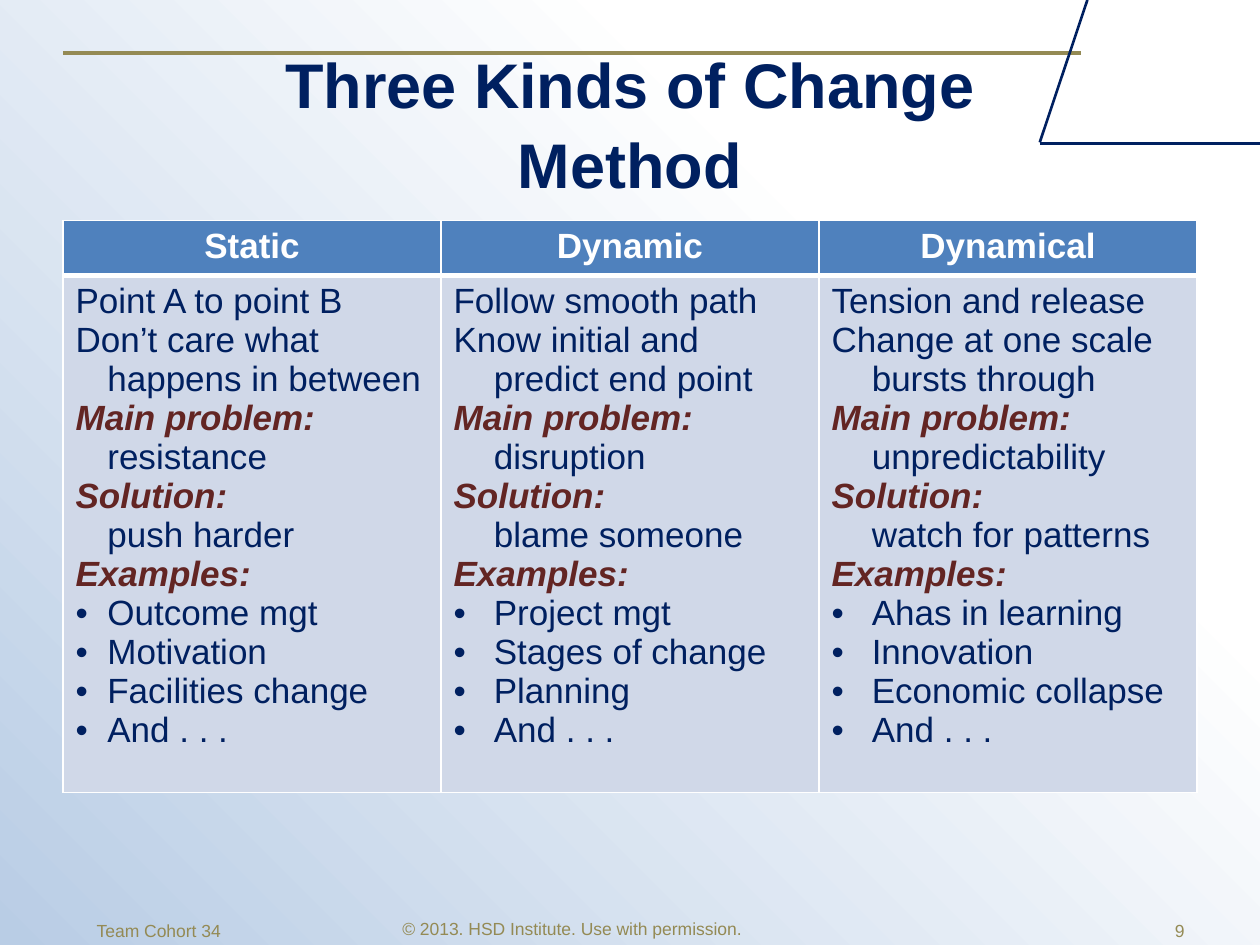
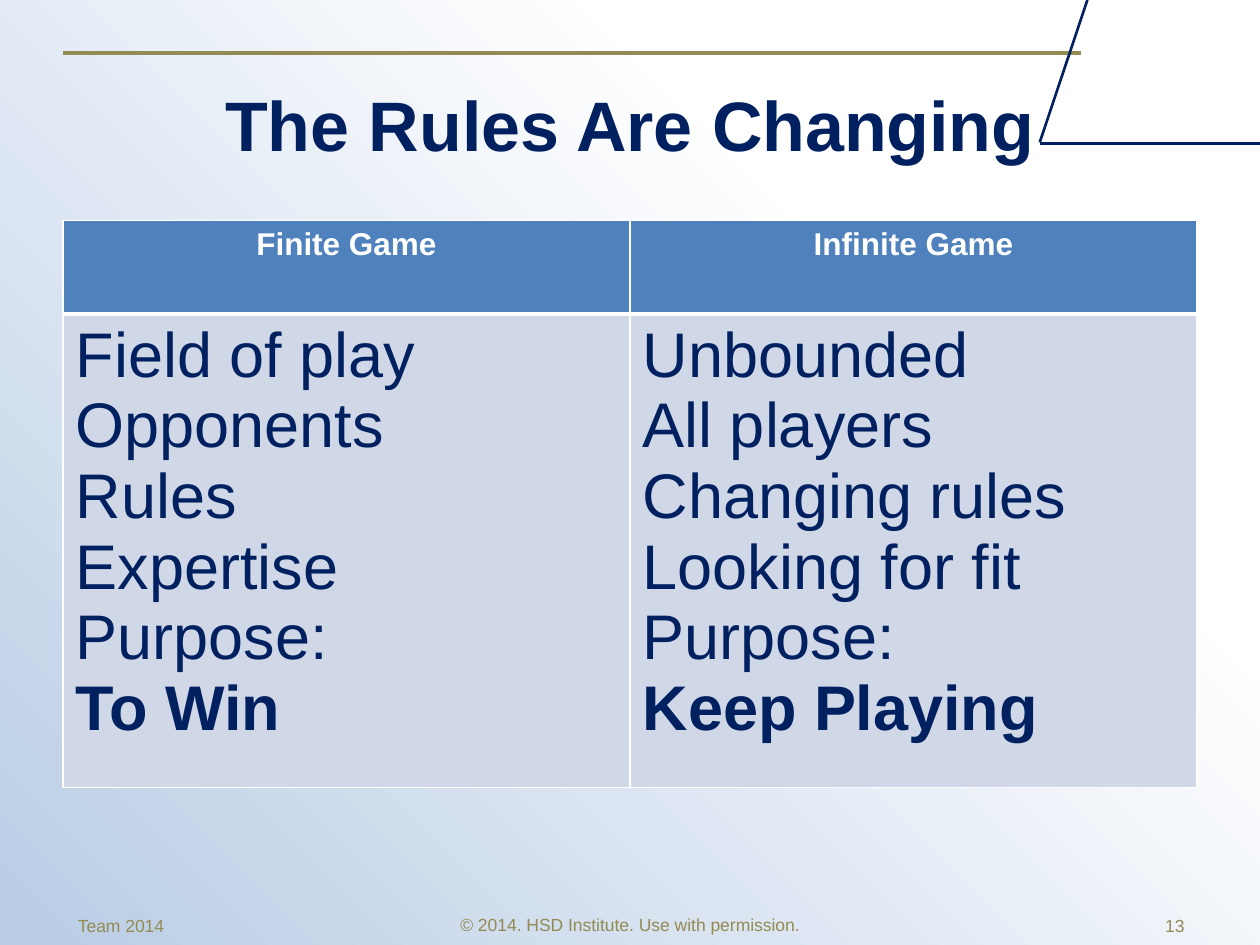
from lxml.etree import SubElement
from pptx import Presentation
from pptx.dml.color import RGBColor
from pptx.enum.shapes import MSO_CONNECTOR
from pptx.enum.text import MSO_ANCHOR, PP_ALIGN
from pptx.oxml.ns import qn
from pptx.util import Cm, Pt

FONT = "Arial"
NAVY, OLIVE, MAROON, WHITE = "002060", "948A54", "632523", "FFFFFF"
HEADER_BLUE, BODY_BLUE, SKY = "4F81BD", "D0D8E8", "B9CDE5"
THIN, THICK = 1, 3

CHANGE_COLUMNS = [
    ("Static", 0.64, ["Point A to point B", "Don’t care what happens in between"],
     "resistance", "push harder",
     ["Outcome mgt", "Motivation", "Facilities change", "And . . ."]),
    ("Dynamic", 0.81, ["Follow smooth path", "Know initial and predict end point"],
     "disruption", "blame someone",
     ["Project mgt", "Stages of change", "Planning", "And . . ."]),
    ("Dynamical", 0.81, ["Tension and release", "Change at one scale bursts through"],
     "unpredictability", "watch for patterns",
     ["Ahas in learning", "Innovation", "Economic collapse", "And . . ."]),
]
GAME_COLUMNS = [
    ("Finite Game", ["Field of play", "Opponents", "Rules", "Expertise"], "To Win"),
    ("Infinite Game", ["Unbounded", "All players", "Changing rules", "Looking for fit"],
     "Keep Playing"),
]


def color(hex_code):
    """Turn a hex string into a colour."""
    return RGBColor.from_string(hex_code)


def style_run(run, size, hex_code, bold=False, italic=False):
    """Set the font of one run."""
    font = run.font
    font.name, font.size, font.bold, font.italic = FONT, Pt(size), bold, italic
    font.color.rgb = color(hex_code)


def add_line(slide, start, end, hex_code, width):
    """Draw a straight line between two points given in centimetres."""
    line = slide.shapes.add_connector(
        MSO_CONNECTOR.STRAIGHT, *(Cm(value) for value in start + end))
    line.line.color.rgb = color(hex_code)
    line.line.width = Pt(width)
    SubElement(line._element.spPr, qn("a:effectLst"))


def add_text(slide, box, text, size, hex_code, alignment, bold=False):
    """Add a vertically centred text box and return its paragraph."""
    text_box = slide.shapes.add_textbox(*(Cm(value) for value in box))
    text_frame = text_box.text_frame
    text_frame.word_wrap = True
    text_frame.vertical_anchor = MSO_ANCHOR.MIDDLE
    paragraph = text_frame.paragraphs[0]
    paragraph.text = text
    paragraph.alignment = alignment
    for run in paragraph.runs:
        style_run(run, size, hex_code, bold)
    return paragraph


def add_base_slide(presentation, title, title_size):
    """Add a slide with the shared background, corner lines and title."""
    slide = presentation.slides.add_slide(presentation.slide_layouts[6])
    fill = slide.background.fill
    fill.gradient()
    fill.gradient_angle = 225
    for stop, position, hex_code in zip(fill.gradient_stops, (0.29, 1), (WHITE, SKY)):
        stop.position = position
        stop.color.rgb = color(hex_code)
    add_line(slide, (1.27, 1.06), (21.8, 1.06), OLIVE, 2.25)
    add_line(slide, (21.92, 0), (20.96, 2.87), NAVY, 1.5)
    add_line(slide, (25.4, 2.89), (20.96, 2.89), NAVY, 1.5)
    paragraph = add_text(slide, (0, 0.81, 25.4, 3.25), title, title_size, NAVY,
                         PP_ALIGN.CENTER, True)
    paragraph.line_spacing = 1.06
    return slide


def add_footer(slide, side_margin, side_width, notice_span, height, texts):
    """Add the group name, copyright notice and page number."""
    group, notice, number = texts
    left, right = side_margin, 24.13 - side_width
    notice_left, notice_width = notice_span
    for box, text, alignment in (
            ((left, 18.24, side_width, height), group, PP_ALIGN.LEFT),
            ((notice_left, 18.21, notice_width, height), notice, PP_ALIGN.CENTER),
            ((right, 18.24, side_width, height), number, PP_ALIGN.RIGHT)):
        add_text(slide, box, text, 10, OLIVE, alignment)


def style_cell(cell, fill, top, bottom):
    """Give a cell its white borders and its fill."""
    properties = cell._tc.get_or_add_tcPr()
    for side, width in (("L", THIN), ("R", THIN), ("T", top), ("B", bottom)):
        border = SubElement(properties, qn(f"a:ln{side}"), w=str(Pt(width)))
        SubElement(SubElement(border, qn("a:solidFill")), qn("a:srgbClr"), val=WHITE)
    cell.fill.solid()
    cell.fill.fore_color.rgb = color(fill)


def add_table(slide, headings, header_size, row_heights):
    """Add a two-row table with headings and return its body cells."""
    frame = slide.shapes.add_table(2, len(headings), Cm(1.27), Cm(4.45),
                                   Cm(22.86), Cm(sum(row_heights)))
    table = frame.table
    for row, height in zip(table.rows, row_heights):
        row.height = Cm(height)
    for index, heading in enumerate(headings):
        header = table.cell(0, index)
        style_cell(header, HEADER_BLUE, THIN, THICK)
        style_cell(table.cell(1, index), BODY_BLUE, THICK, THIN)
        paragraph = header.text_frame.paragraphs[0]
        paragraph.text = heading
        paragraph.alignment = PP_ALIGN.CENTER
        style_run(paragraph.runs[0], header_size, WHITE, True)
    return list(table.rows[1].cells)


def next_paragraph(cell):
    """Return the empty first paragraph of a cell, or a new one."""
    first = cell.text_frame.paragraphs[0]
    return cell.text_frame.add_paragraph() if first.runs else first


def add_entry(cell, text, size):
    """Add a plain navy paragraph to a cell."""
    paragraph = next_paragraph(cell)
    paragraph.text = text
    style_run(paragraph.runs[0], size, NAVY)
    return paragraph


def add_labelled(cell, label, detail, size, label_style, detail_style):
    """Add a paragraph made of a label and a differently styled detail."""
    paragraph = next_paragraph(cell)
    paragraph.text = label
    style_run(paragraph.runs[0], size, *label_style)
    if detail:
        run = paragraph.add_run()
        run.text = detail
        style_run(run, size, *detail_style)
    return paragraph


def hang(paragraph, indent, bullet=False):
    """Give a paragraph a hanging indent and, if wanted, a bullet."""
    properties = paragraph._p.get_or_add_pPr()
    properties.set("marL", str(Cm(indent)))
    properties.set("indent", str(-Cm(indent)))
    if bullet:
        SubElement(properties, qn("a:buFont"), typeface=FONT)
        SubElement(properties, qn("a:buChar"), char="•")


def build_change_slide(presentation):
    """Build the comparison of three kinds of change."""
    slide = add_base_slide(presentation, "Three Kinds of Change\vMethod", 36)
    cells = add_table(slide, [column[0] for column in CHANGE_COLUMNS], 20, (1.02, 9.7))
    for cell, column in zip(cells, CHANGE_COLUMNS):
        _, indent, traits, problem, solution, examples = column
        for trait in traits:
            hang(add_entry(cell, trait, 20), indent)
        for label, detail in (("Main problem: ", problem), ("Solution:\v", solution),
                              ("Examples:", "")):
            hang(add_labelled(cell, label, detail, 20, (MAROON, True, True), (NAVY,)),
                 indent)
        for example in examples:
            hang(add_entry(cell, example, 20), indent, bullet=True)
    add_footer(slide, 1.7, 5.92, (1.27, 20.52), 1.02,
               ("Team Cohort 34", "© 2013. HSD Institute. Use with permission.", "9"))


def build_game_slide(presentation):
    """Build the comparison of finite and infinite games."""
    slide = add_base_slide(presentation, "The Rules Are Changing", 40)
    cells = add_table(slide, [column[0] for column in GAME_COLUMNS], 18, (1.88, 9.55))
    for cell, (_, features, purpose) in zip(cells, GAME_COLUMNS):
        for feature in features:
            add_entry(cell, feature, 36)
        add_labelled(cell, "Purpose:\v", purpose, 36, (NAVY,), (NAVY, True))
    add_footer(slide, 1.32, 6.3, (0, 25.4), 0.84,
               ("Team 2014", "© 2014. HSD Institute. Use with permission.", "13"))


def main():
    """Build and save the presentation."""
    presentation = Presentation()
    presentation.slide_width, presentation.slide_height = Cm(25.4), Cm(19.05)
    build_change_slide(presentation)
    build_game_slide(presentation)
    presentation.save("out.pptx")


if __name__ == "__main__":
    main()
